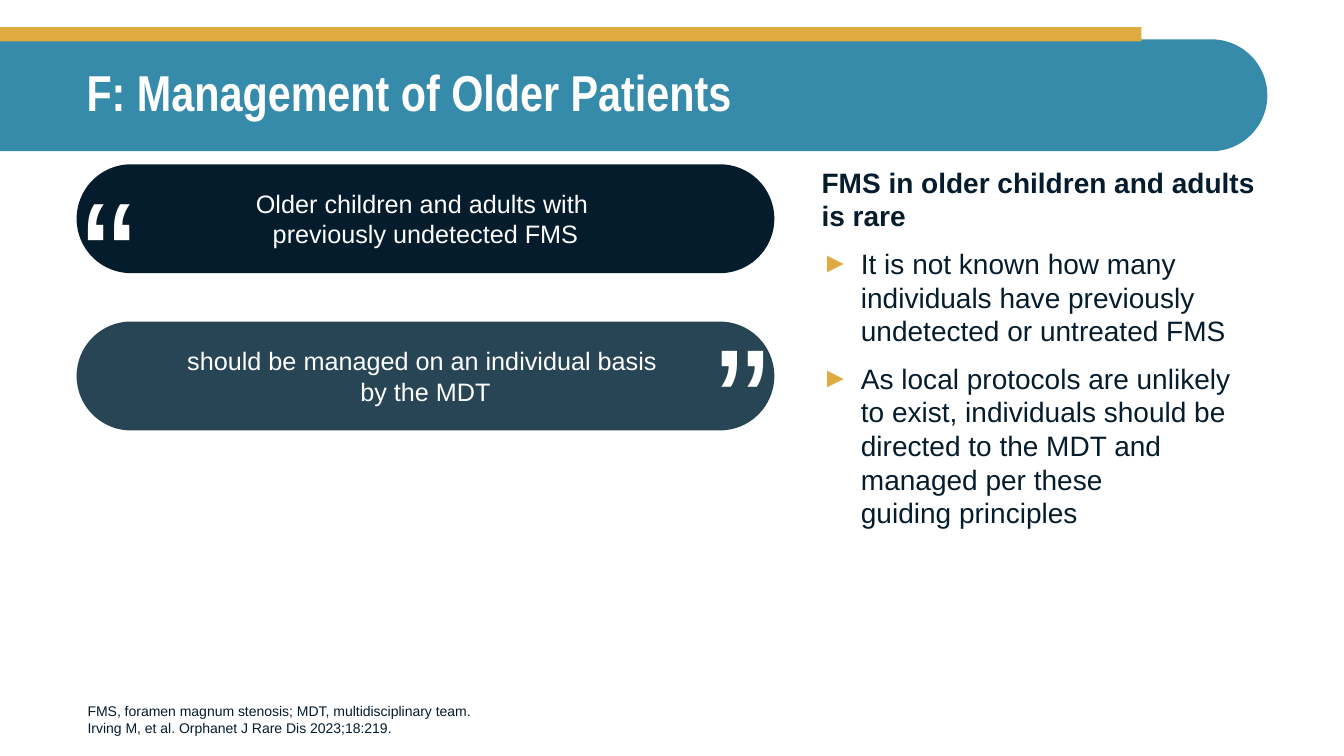
from lxml import etree
from pptx import Presentation
from pptx.dml.color import RGBColor
from pptx.enum.shapes import MSO_SHAPE
from pptx.enum.text import MSO_ANCHOR, MSO_AUTO_SIZE, PP_ALIGN
from pptx.oxml.ns import qn
from pptx.util import Emu, Pt

RECTANGLE = MSO_SHAPE.RECTANGLE
PILL = MSO_SHAPE.ROUNDED_RECTANGLE
BANNER = MSO_SHAPE.ROUND_2_SAME_RECTANGLE
TOP, MIDDLE, BOTTOM = MSO_ANCHOR.TOP, MSO_ANCHOR.MIDDLE, MSO_ANCHOR.BOTTOM
LEFT, CENTER = PP_ALIGN.LEFT, PP_ALIGN.CENTER
GROW = MSO_AUTO_SIZE.SHAPE_TO_FIT_TEXT

# Content
TITLE = "F: Management of Older Patients"
HEADING = "FMS in older children and adults is rare"
BULLETS = [
    "It is not known how many individuals have previously undetected or untreated FMS",
    "As local protocols are unlikely to exist, individuals should be directed "
    "to the MDT and managed per these \nguiding principles",
]
FOOTNOTES = [
    "FMS, foramen magnum stenosis; MDT, multidisciplinary team.",
    "Irving M, et al. Orphanet J Rare Dis 2023;18:219.",
]
# Statement, pill colour, quote mark left and top, quote mark rotation
STATEMENTS = [
    ("Older children and adults with \npreviously undetected FMS", "051C2C", 72, 148, 0),
    ("should be managed on an individual basis \nby the MDT", "274554", 699, 235, 180),
]
QUOTE_MARK = "“"

# Layout in px, 100 to the inch
EMU_PER_PX = 9144
SLIDE_WIDTH, SLIDE_HEIGHT = 1333, 750
BANNER_TOP, BANNER_WIDTH, BANNER_HEIGHT = 39, 1257, 111
PILL_LEFT, PILL_TOP, PILL_WIDTH, PILL_HEIGHT, PILL_STEP = 76, 163, 692, 108, 156
QUOTE_WIDTH, QUOTE_HEIGHT = 74, 204
BULLET_INDENT = 39

INK, WHITE, TEAL, GOLD = "051C2C", "FFFFFF", "368BAB", "DFAA40"


def px(value):
    return Emu(int(value * EMU_PER_PX))


def color(hex_value):
    return RGBColor.from_string(hex_value)


def add_block(kind, left, top, width, height, fill):
    shape = slide.shapes.add_shape(kind, px(left), px(top), px(width), px(height))
    shape.shadow.inherit = False
    shape.fill.solid()
    shape.fill.fore_color.rgb = color(fill)
    shape.line.fill.background()
    return shape


def add_box(left, top, width, height, anchor=TOP, wrap=True):
    box = slide.shapes.add_textbox(px(left), px(top), px(width), px(height))
    box.text_frame.word_wrap = wrap
    box.text_frame.vertical_anchor = anchor
    return box


def write(paragraph, text, size, ink, bold=False, font="Arial", align=LEFT):
    paragraph.alignment = align
    for index, line in enumerate(text.split("\n")):
        if index:
            paragraph.add_line_break()
        run = paragraph.add_run()
        run.text = line
        run.font.size = Pt(size)
        run.font.name = font
        run.font.bold = bold
        run.font.color.rgb = color(ink)


def add_bullet(paragraph):
    properties = paragraph._p.get_or_add_pPr()
    properties.set("marL", str(px(BULLET_INDENT)))
    properties.set("indent", str(-px(BULLET_INDENT)))
    bullet_color = etree.SubElement(properties, qn("a:buClr"))
    etree.SubElement(bullet_color, qn("a:srgbClr"), val=GOLD)
    etree.SubElement(properties, qn("a:buFont"), typeface="Arial")
    etree.SubElement(properties, qn("a:buChar"), char="►")


presentation = Presentation()
presentation.slide_width = px(SLIDE_WIDTH)
presentation.slide_height = px(SLIDE_HEIGHT)
slide = presentation.slides.add_slide(presentation.slide_layouts[6])

# Banner: an upright shape turned about its centre so the round end faces right
banner = add_block(
    BANNER,
    (BANNER_WIDTH - BANNER_HEIGHT) / 2,
    BANNER_TOP + (BANNER_HEIGHT - BANNER_WIDTH) / 2,
    BANNER_HEIGHT, BANNER_WIDTH, TEAL,
)
banner.rotation = 270
banner.adjustments[0] = 0
banner.adjustments[1] = 0.5
add_block(RECTANGLE, 0, 27, 1132, 14, GOLD)

# Title
title = add_box(76, 39, 1181, 110, MIDDLE).text_frame.paragraphs[0]
title.line_spacing = 0.9
write(title, TITLE, 36, WHITE, bold=True, font="Arial Narrow")

# Key points
points = add_box(805, 159, 452, 428).text_frame
write(points.paragraphs[0], HEADING, 20, INK, bold=True)
for text in BULLETS:
    paragraph = points.add_paragraph()
    paragraph.space_before = Pt(10)
    add_bullet(paragraph)
    write(paragraph, text, 20, INK)

# Footnotes
notes = add_box(77, 679, 988, 56, BOTTOM).text_frame
for index, text in enumerate(FOOTNOTES):
    paragraph = notes.add_paragraph() if index else notes.paragraphs[0]
    write(paragraph, text, 10, INK)

# Statements with their quote marks
for index, (text, fill, quote_left, quote_top, rotation) in enumerate(STATEMENTS):
    pill = add_block(PILL, PILL_LEFT, PILL_TOP + index * PILL_STEP,
                     PILL_WIDTH, PILL_HEIGHT, fill)
    pill.adjustments[0] = 0.5
    pill.text_frame.word_wrap = True
    pill.text_frame.vertical_anchor = MIDDLE
    write(pill.text_frame.paragraphs[0], text, 18, WHITE, align=CENTER)

    quote = add_box(quote_left, quote_top, QUOTE_WIDTH, QUOTE_HEIGHT, wrap=False)
    quote.text_frame.auto_size = GROW
    quote.rotation = rotation
    write(quote.text_frame.paragraphs[0], QUOTE_MARK, 115, WHITE)

presentation.save("out.pptx")
